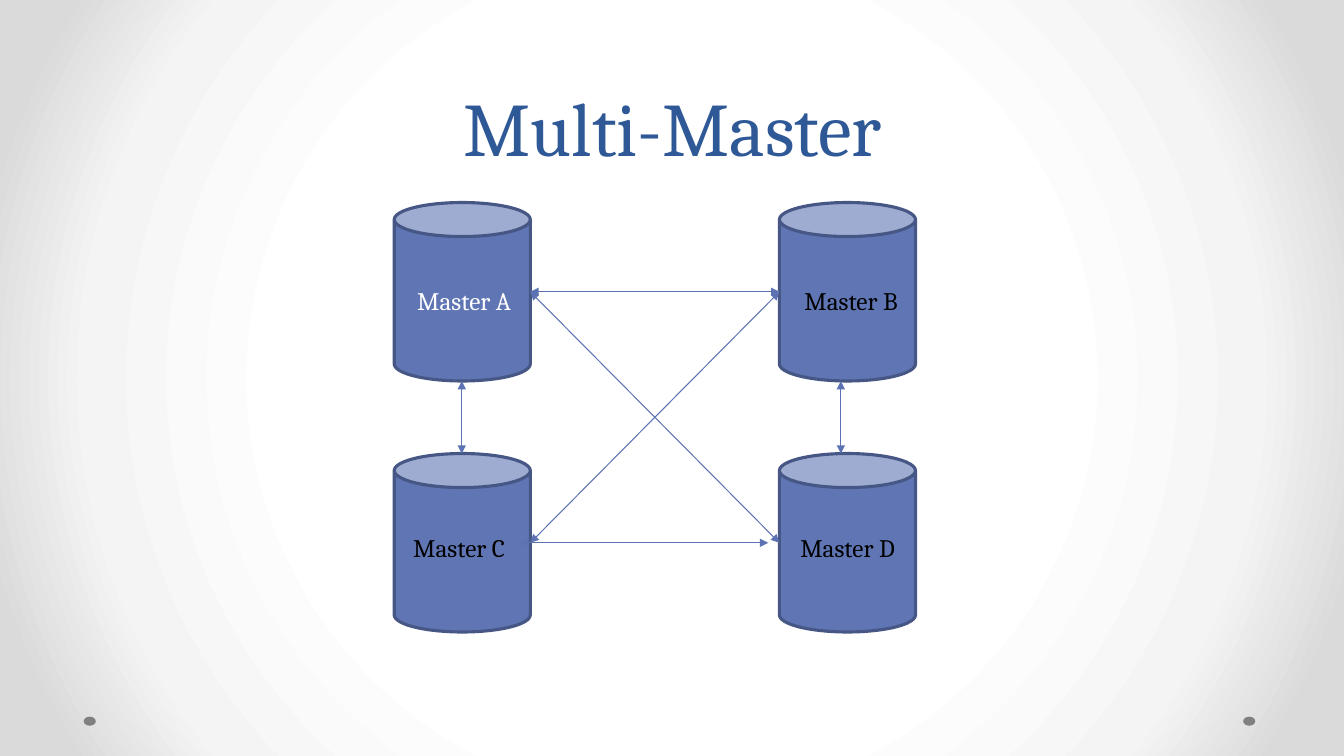
import pptx
import pptx.util
import pptx.dml.color
import pptx.enum.shapes
import pptx.enum.text
import pptx.oxml
import pptx.oxml.ns
from pptx.util import Inches

FONT = "Cambria"
COLORS = {
    "title": "2F5897", "can": "6076B4", "can_line": "475785",
    "arrow": "5C72B2", "dot": "808080", "light": "FFFFFF", "dark": "000000",
}
BACKGROUND_STOPS = [(50, "FFFFFF"), (76, "F4F4F4"), (92, "DADADA")]
CAN_W, CAN_H = 1.35, 1.77
LEFT, RIGHT = 3.91, 7.73
TOP, BOTTOM = 2.01, 4.5


def rgb(name):
    return pptx.dml.color.RGBColor.from_string(COLORS[name])


def set_background(s):
    stops = "".join(
        f'<a:gs pos="{pos * 1000}"><a:srgbClr val="{color}"/></a:gs>'
        for pos, color in BACKGROUND_STOPS)
    s.element.cSld.insert(0, pptx.oxml.parse_xml(
        f'<p:bg {pptx.oxml.ns.nsdecls("p", "a")}><p:bgPr>'
        f'<a:gradFill rotWithShape="1"><a:gsLst>{stops}</a:gsLst>'
        '<a:path path="circle">'
        '<a:fillToRect l="50000" t="50000" r="50000" b="50000"/></a:path>'
        '</a:gradFill><a:effectLst/></p:bgPr></p:bg>'))


def set_text(tf, text, size, color):
    tf.text = text
    p = tf.paragraphs[0]
    font = p.runs[0].font
    font.name, font.size = FONT, pptx.util.Pt(size)
    font.color.rgb = rgb(color)
    return p


def add_title(s, text):
    sp = s.shapes.title
    sp.left, sp.top = Inches(0.67), Inches(0)
    sp.width, sp.height = Inches(12), Inches(1.75)
    sp.text_frame.vertical_anchor = pptx.enum.text.MSO_ANCHOR.BOTTOM
    p = set_text(sp.text_frame, text, 54, "title")
    p.alignment = pptx.enum.text.PP_ALIGN.CENTER
    p.line_spacing = pptx.util.Pt(58)


def add_filled(s, kind, x, y, w, h, color):
    sp = s.shapes.add_shape(kind, Inches(x), Inches(y), Inches(w), Inches(h))
    sp.shadow.inherit = False
    sp.fill.solid()
    sp.fill.fore_color.rgb = rgb(color)
    sp.line.fill.background()
    return sp


def add_can(s, x, y):
    sp = add_filled(s, pptx.enum.shapes.MSO_SHAPE.CAN, x, y, CAN_W, CAN_H, "can")
    sp.line.color.rgb = rgb("can_line")
    sp.line.width = pptx.util.Pt(2.25)
    return sp


def add_double_arrow(s, x1, y1, x2, y2):
    line = s.shapes.add_connector(
        pptx.enum.shapes.MSO_CONNECTOR.STRAIGHT,
        Inches(x1), Inches(y1), Inches(x2), Inches(y2))
    line.line.color.rgb = rgb("arrow")
    line.line.width = pptx.util.Pt(0.75)
    ln = line.line._get_or_add_ln()
    for end in ("headEnd", "tailEnd"):
        ln.append(pptx.oxml.parse_xml(
            f'<a:{end} {pptx.oxml.ns.nsdecls("a")} type="triangle"/>'))
    ln.getparent().append(pptx.oxml.parse_xml(
        f'<a:effectLst {pptx.oxml.ns.nsdecls("a")}/>'))


def add_label(s, text, x, y, w):
    sp = s.shapes.add_textbox(Inches(x), Inches(y), Inches(w), Inches(0.4))
    tf = sp.text_frame
    set_text(tf, text, 18, "dark")
    tf.word_wrap = False
    tf.auto_size = pptx.enum.text.MSO_AUTO_SIZE.SHAPE_TO_FIT_TEXT


def main():
    prs = pptx.Presentation()
    prs.slide_width, prs.slide_height = Inches(13.33), Inches(7.5)
    s = prs.slides.add_slide(prs.slide_layouts[5])
    set_background(s)

    for x in (12.33, 0.83):
        add_filled(s, pptx.enum.shapes.MSO_SHAPE.OVAL, x, 7.11, 0.12, 0.09, "dot")
    add_title(s, "Multi-Master")

    for y in (BOTTOM, TOP):
        for x in (LEFT, RIGHT):
            sp = add_can(s, x, y)
            if (x, y) == (LEFT, TOP):
                p = set_text(sp.text_frame, "Master A", 18, "light")
                p.alignment = pptx.enum.text.PP_ALIGN.LEFT
                p._p.get_or_add_pPr().set("marL", str(Inches(0.13)))
                sp.text_frame.vertical_anchor = pptx.enum.text.MSO_ANCHOR.MIDDLE

    inner = LEFT + CAN_W
    upper, lower = TOP + CAN_H / 2, BOTTOM + CAN_H / 2
    shift = 0.11  # the lower arrow sits slightly left of the gap
    add_double_arrow(s, inner, upper, RIGHT, upper)
    add_double_arrow(s, inner - shift, lower, RIGHT - shift, lower)
    add_double_arrow(s, inner, lower, RIGHT, upper)
    add_double_arrow(s, inner, upper, RIGHT, lower)
    for x in (4.58, 8.34):
        add_double_arrow(s, x, TOP + CAN_H, x, BOTTOM)

    add_label(s, "Master C", 4, 5.23, 1.22)
    add_label(s, "Master B", 7.88, 2.78, 1.19)
    add_label(s, "Master D", 7.84, 5.23, 1.23)
    prs.save("out.pptx")


if __name__ == "__main__":
    main()
